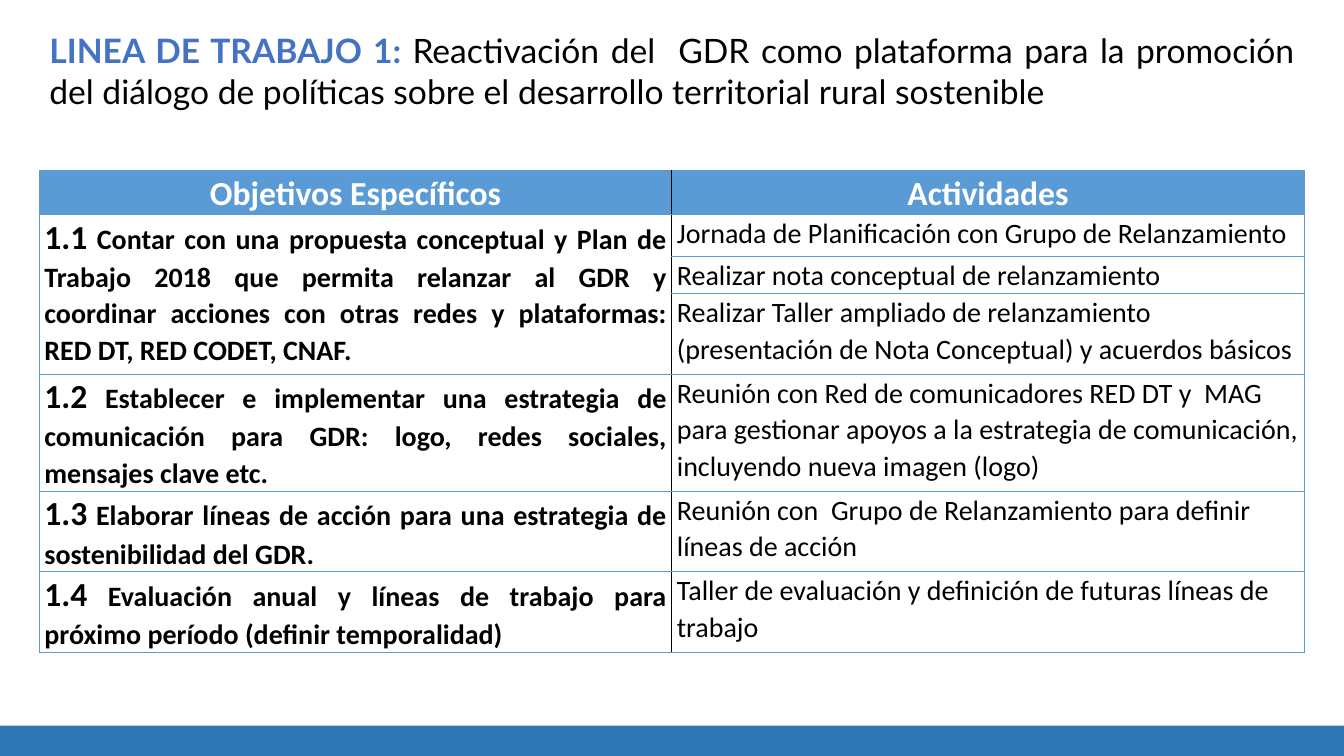
"""Build the slide on work line 1: specific objectives and their activities."""
from dataclasses import dataclass
from typing import Any

from lxml import etree
from pptx import Presentation
from pptx import util as u
from pptx.dml.color import RGBColor
from pptx.enum import shapes, text
from pptx.oxml import ns

BLACK = RGBColor(0x00, 0x00, 0x00)
WHITE = RGBColor(0xFF, 0xFF, 0xFF)
TITLE_BLUE = RGBColor(0x44, 0x72, 0xC4)
TABLE_BLUE = RGBColor(0x5B, 0x9B, 0xD5)
BAR_BLUE = RGBColor(0x2E, 0x75, 0xB6)

LEFT, WIDTH = 28.1, 903.6
ROW_HEIGHTS = (31.4, 30.2, 26, 57.6, 82, 56.6, 57)
CELL_FORMAT = {"margin_left": u.Pt(3.6), "margin_right": u.Pt(3.6),
               "margin_top": 0, "margin_bottom": 0}
TITLE_FORMAT = {"left": u.Pt(LEFT), "top": u.Pt(18),
                "width": u.Pt(WIDTH), "height": u.Pt(65.5)}
TITLE_FRAME = {"word_wrap": True, "auto_size": text.MSO_AUTO_SIZE.NONE,
               "vertical_anchor": text.MSO_ANCHOR.TOP}
JUSTIFY, CENTER, START = (text.PP_ALIGN.JUSTIFY, text.PP_ALIGN.CENTER,
                          text.PP_ALIGN.LEFT)


@dataclass(frozen=True)
class Span:
    words: str
    size: float = 20
    bold: bool = False
    color: RGBColor = BLACK
    font: str = "Calibri"


@dataclass(frozen=True)
class Objective:
    number: str
    words: str
    activities: tuple[str, ...]
    anchor: Any = text.MSO_ANCHOR.TOP


TITLE = (
    Span("LINEA DE TRABAJO 1: ", 24, True, TITLE_BLUE, "Lato"),
    Span("Reactivación del  GDR como plataforma para la promoción del diálogo "
         "de políticas sobre el desarrollo territorial rural sostenible ",
         24, font="Lato"),
)
HEADINGS = ("Objetivos Específicos", "Actividades")
OBJECTIVES = (
    Objective("1.1", " Contar con una propuesta conceptual y Plan de Trabajo 2018 "
              "que permita relanzar al GDR y coordinar acciones con otras redes y "
              "plataformas: RED DT, RED CODET, CNAF.",
              ("Jornada de Planificación con Grupo de Relanzamiento",
               "Realizar nota conceptual de relanzamiento",
               "Realizar Taller ampliado de relanzamiento (presentación de Nota "
               "Conceptual) y acuerdos básicos")),
    Objective("1.2", " Establecer e implementar una estrategia de comunicación para "
              "GDR: logo, redes sociales, mensajes clave etc.",
              ("Reunión con Red de comunicadores RED DT y  MAG para gestionar "
               "apoyos a la estrategia de comunicación, incluyendo nueva imagen "
               "(logo)",)),
    Objective("1.3", " Elaborar líneas de acción para una estrategia de "
              "sostenibilidad del GDR.",
              ("Reunión con  Grupo de Relanzamiento para definir líneas de acción",),
              text.MSO_ANCHOR.BOTTOM),
    Objective("1.4", " Evaluación anual y líneas de trabajo para próximo período "
              "(definir temporalidad)",
              ("Taller de evaluación y definición de futuras líneas de trabajo",),
              text.MSO_ANCHOR.BOTTOM),
)


def apply_format(target: Any, values: dict[str, Any]) -> None:
    """Set each named attribute on the target."""
    for name, value in values.items():
        setattr(target, name, value)


def write_spans(frame: Any, spans: tuple[Span, ...], align: Any, spacing: float) -> None:
    """Write the spans as one paragraph."""
    para = frame.paragraphs[0]
    apply_format(para, {"alignment": align, "line_spacing": spacing})
    for span in spans:
        run = para.add_run()
        run.text = span.words
        apply_format(run.font, {"name": span.font, "size": u.Pt(span.size),
                                "bold": span.bold})
        run.font.color.rgb = span.color


def add_border(cell: Any, side: str, color: RGBColor, width: float) -> None:
    """Draw one side of a cell."""
    properties = cell._tc.get_or_add_tcPr()
    line = etree.SubElement(properties, ns.qn(f"a:ln{side}"), w=str(u.Pt(width)))
    fill = etree.SubElement(line, ns.qn("a:solidFill"))
    etree.SubElement(fill, ns.qn("a:srgbClr"), val=str(color))


def fill_cell(cell: Any, column: int, spans: tuple[Span, ...], align: Any,
              anchor: Any, fill: RGBColor | None = None) -> None:
    """Write, border and fill one table cell."""
    apply_format(cell, CELL_FORMAT | {"vertical_anchor": anchor})
    write_spans(cell.text_frame, spans, align, 1.07)
    middle = "R" if column == 0 else "L"
    for side in "LRTB":
        if side == middle:
            add_border(cell, side, BLACK, 1)
        else:
            add_border(cell, side, TABLE_BLUE, 0.5)
    if fill is None:
        cell.fill.background()
    else:
        cell.fill.solid()
        cell.fill.fore_color.rgb = fill


def add_objectives(page: Any) -> None:
    """Add the table of objectives and activities."""
    table = page.shapes.add_table(
        len(ROW_HEIGHTS), len(HEADINGS), u.Pt(LEFT), u.Pt(121.7),
        u.Pt(WIDTH), u.Pt(sum(ROW_HEIGHTS))).table
    apply_format(table, {"first_row": False, "horz_banding": False})
    for row, height in zip(table.rows, ROW_HEIGHTS):
        row.height = u.Pt(height)
    for column, heading in enumerate(HEADINGS):
        fill_cell(table.cell(0, column), column, (Span(heading, 24, True, WHITE),),
                  CENTER, text.MSO_ANCHOR.BOTTOM, TABLE_BLUE)
    top = 1
    for objective in OBJECTIVES:
        count = len(objective.activities)
        cell = table.cell(top, 0)
        if count > 1:
            cell.merge(table.cell(top + count - 1, 0))
        spans = (Span(objective.number, 24, True), Span(objective.words, bold=True))
        fill_cell(cell, 0, spans, JUSTIFY, objective.anchor)
        for row_index, activity in enumerate(objective.activities, top):
            fill_cell(table.cell(row_index, 1), 1, (Span(activity),),
                      START, text.MSO_ANCHOR.TOP)
        top += count


def main() -> None:
    """Build and save the deck."""
    deck = Presentation()
    apply_format(deck, {"slide_width": u.Pt(960), "slide_height": u.Pt(540)})
    page = deck.slides.add_slide(deck.slide_layouts.get_by_name("Title Only"))
    bar = page.shapes.add_shape(shapes.MSO_SHAPE.RECTANGLE, 0, u.Pt(518.4),
                                u.Pt(960), u.Pt(21.6))
    bar.shadow.inherit = False
    bar.fill.solid()
    bar.fill.fore_color.rgb = BAR_BLUE
    bar.line.fill.background()
    title = page.shapes.title
    apply_format(title, TITLE_FORMAT)
    apply_format(title.text_frame, TITLE_FRAME)
    write_spans(title.text_frame, TITLE, JUSTIFY, 1.0)
    add_objectives(page)
    deck.save("out.pptx")


if __name__ == "__main__":
    main()
